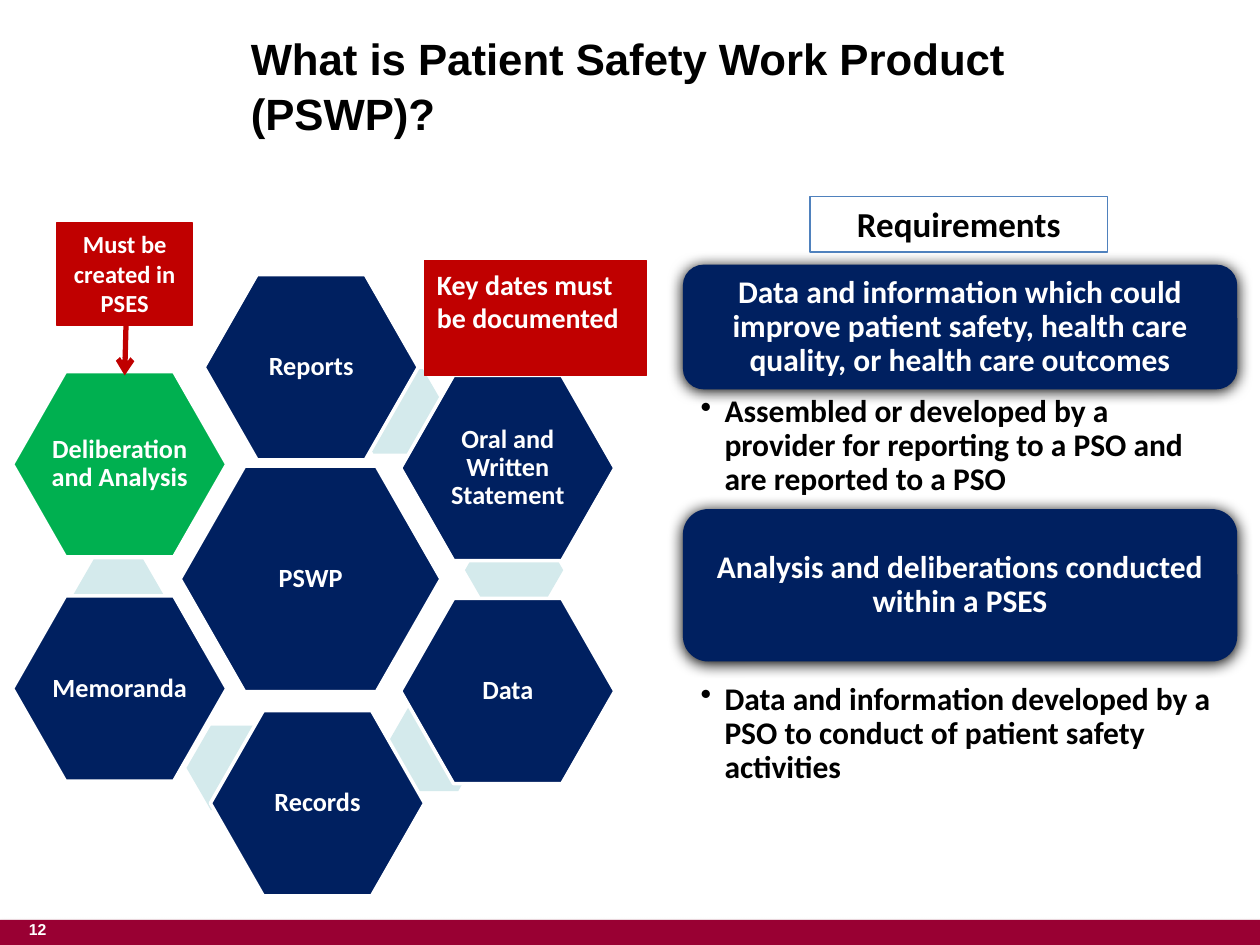
from lxml import etree
from pptx import Presentation
from pptx import util as u
from pptx.dml.color import RGBColor
from pptx.enum import shapes, text
from pptx.oxml.ns import qn

COLORS = {"navy": "002060", "green": "00B050", "red": "C00000", "pale": "D4EAEC",
          "maroon": "990033", "blue": "4F81BD", "white": "FFFFFF", "black": "000000"}
KIND = shapes.MSO_SHAPE
ALIGN = text.PP_ALIGN
ANCHOR = text.MSO_ANCHOR

HEX_SIZE = (1.7, 1.47)
LINK_SIZE = (0.78, 0.67)
# Label, hexagon corner, connecting piece corner, colour
HEXAGONS = [
    ("Reports", (1.62, 2.18), (2.77, 2.93), "navy"),
    ("Oral and Written Statement", (3.18, 2.98), (3.69, 4.19), "navy"),
    ("Data", (3.18, 4.75), (3.05, 5.61), "navy"),
    ("Records", (1.67, 5.64), (1.48, 5.76), "navy"),
    ("Memoranda", (0.1, 4.73), (0.55, 4.44), "navy"),
    ("Deliberation and Analysis", (0.1, 2.95), None, "green"),
]


def color(name):
    return RGBColor.from_string(COLORS[name])


def inches(values):
    return [u.Inches(value) for value in values]


def write(box, words, size, ink="white", align=ALIGN.CENTER, anchor=ANCHOR.TOP,
          insets=(0.1, 0.05), spacing=None, font="Calibri"):
    frame = box.text_frame
    frame.text = words
    frame.word_wrap = True
    frame.auto_size = text.MSO_AUTO_SIZE.NONE
    frame.vertical_anchor = anchor
    frame.margin_left = frame.margin_right = u.Inches(insets[0])
    frame.margin_top = frame.margin_bottom = u.Inches(insets[1])
    para = frame.paragraphs[0]
    para.alignment = align
    if spacing:
        para.line_spacing = spacing
    span = para.runs[0].font
    span.name, span.size, span.bold = font, u.Pt(size), True
    span.color.rgb = color(ink)
    return para


def add_box(slide, kind, at, fill=None, line=None, width=0.75):
    box = slide.shapes.add_shape(kind, *inches(at))
    box.shadow.inherit = False
    if fill:
        box.fill.solid()
        box.fill.fore_color.rgb = color(fill)
    else:
        box.fill.background()
    if line:
        box.line.color.rgb = color(line)
        box.line.width = u.Pt(width)
    else:
        box.line.fill.background()
    return box


def add_shadow(box, blur, distance, opacity):
    effects = box._element.spPr.find(qn("a:effectLst"))
    shadow = etree.SubElement(effects, qn("a:outerShdw"), blurRad=str(u.Pt(blur)),
                              dist=str(u.Pt(distance)), dir="5400000", rotWithShape="0")
    tint = etree.SubElement(shadow, qn("a:srgbClr"), val=COLORS["black"])
    etree.SubElement(tint, qn("a:alpha"), val=str(opacity * 1000))


def add_hexagon(slide, label, corner, size, fill):
    box = add_box(slide, KIND.HEXAGON, (*corner, *size), fill, "white", 2)
    box.adjustments[0] = 0.286
    # The label takes the middle two thirds of the hexagon
    place = [start + length / 6 for start, length in zip(corner, size)]
    area = [length * 2 / 3 for length in size]
    label_box = slide.shapes.add_textbox(*inches(place + area))
    write(label_box, label, 15, anchor=ANCHOR.MIDDLE, insets=(0.02, 0.02), spacing=0.9)


def add_link(slide, corner):
    link = add_box(slide, KIND.HEXAGON, (*corner, *LINK_SIZE), "pale")
    link.adjustments[0] = 0.289


def add_card(slide, words, top, height):
    card = add_box(slide, KIND.ROUNDED_RECTANGLE, (5.42, top, 4.4, height), "navy")
    add_shadow(card, 8.5, 1, 100)
    write(card, words, 18, anchor=ANCHOR.MIDDLE, insets=(0.07, 0.07), spacing=0.9)


def add_bullet(slide, words, top):
    box = slide.shapes.add_textbox(*inches((5.42, top, 4.4, 1.07)))
    para = write(box, words, 18, "black", ALIGN.LEFT, insets=(0.14, 0.03), spacing=0.9)
    properties = para._p.get_or_add_pPr()
    properties.set("marL", str(u.Inches(0.19)))
    properties.set("indent", str(u.Inches(-0.19)))
    etree.SubElement(properties, qn("a:buChar"), char="•")


def add_callout(slide, words, at, size, align):
    box = add_box(slide, KIND.RECTANGLE, at, "red", "red")
    write(box, words, size, align=align)


def add_arrow(slide, start, end):
    arrow = slide.shapes.add_connector(shapes.MSO_CONNECTOR.STRAIGHT, *inches(start + end))
    arrow.line.color.rgb = color("red")
    arrow.line.width = u.Pt(3)
    etree.SubElement(arrow.line._get_or_add_ln(), qn("a:tailEnd"), type="arrow")
    etree.SubElement(arrow._element.spPr, qn("a:effectLst"))


def add_title(slide, words):
    title = slide.shapes.title
    title.left, title.top, title.width, title.height = inches((1.89, 0.36, 7.74, 1.01))
    write(title, words, 25, "black", ALIGN.LEFT, ANCHOR.MIDDLE, font="Arial", spacing=1.05)
    title.text_frame.margin_bottom = u.Inches(0.45)


def add_footer(slide, number):
    bar = add_box(slide, KIND.RECTANGLE, (0, 7.3, 10.01, 0.2), "maroon")
    add_shadow(bar, 3.1, 1.8, 35)
    box = slide.shapes.add_textbox(*inches((0.13, 7.25, 0.91, 0.25)))
    write(box, number, 9, align=ALIGN.LEFT, font="Arial")


def main():
    deck = Presentation()
    deck.slide_width, deck.slide_height = u.Inches(10), u.Inches(7.5)
    page = deck.slides.add_slide(deck.slide_layouts[5])
    add_footer(page, "12")
    add_title(page, "What is Patient Safety Work Product (PSWP)?")

    # Hexagon ring around the centre
    add_hexagon(page, "PSWP", (1.43, 3.7), (2.07, 1.79), "navy")
    for label, corner, link, fill in HEXAGONS:
        if link:
            add_link(page, link)
        add_hexagon(page, label, corner, HEX_SIZE, fill)

    # Requirements column
    add_card(page, "Data and information which could improve patient safety, "
                   "health care quality, or health care outcomes", 2.1, 0.99)
    add_bullet(page, "Assembled or developed by a provider for reporting to a PSO "
                     "and are reported to a PSO", 3.11)
    add_card(page, "Analysis and deliberations conducted within a PSES", 4.04, 1.21)
    add_bullet(page, "Data and information developed by a PSO to conduct of "
                     "patient safety activities", 5.39)
    heading = add_box(page, KIND.RECTANGLE, (6.43, 1.56, 2.36, 0.44), line="blue")
    write(heading, "Requirements", 20, "black")

    # Red callouts
    add_callout(page, "Must be created in PSES", (0.45, 1.77, 1.08, 0.81), 14, ALIGN.CENTER)
    add_arrow(page, (1, 2.58), (0.99, 2.98))
    add_callout(page, "Key dates must be documented", (3.37, 2.07, 1.76, 0.91), 16, ALIGN.LEFT)
    deck.save("out.pptx")


if __name__ == "__main__":
    main()
